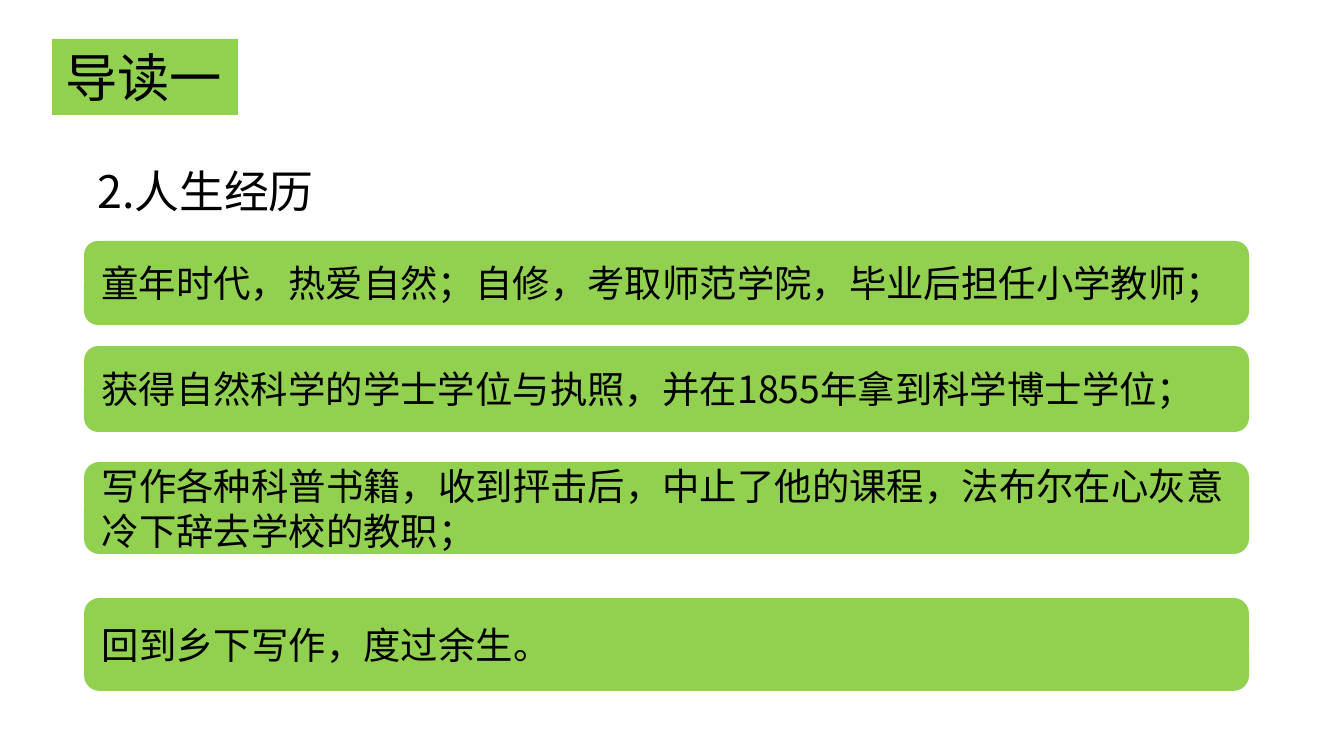
from pptx import Presentation
from pptx.dml.color import RGBColor
from pptx.enum.shapes import MSO_SHAPE
from pptx.enum.text import MSO_ANCHOR, PP_ALIGN
from pptx.oxml.ns import qn
from pptx.util import Pt
from lxml import etree

RECTANGLE = MSO_SHAPE.RECTANGLE
ROUNDED = MSO_SHAPE.ROUNDED_RECTANGLE
TOP, MIDDLE = MSO_ANCHOR.TOP, MSO_ANCHOR.MIDDLE
LEFT = PP_ALIGN.LEFT

FONT = "Noto Sans CJK SC"
GREEN, BLACK = "92D050", "000000"
EMU_PER_PX = 914400 / 134.4

TAG = "导读一"
HEADING = "2.人生经历"
# text, top, height
LIFE_STAGES = [
    ("童年时代，热爱自然；自修，考取师范学院，毕业后担任小学教师；", 241, 84),
    ("获得自然科学的学士学位与执照，并在1855年拿到科学博士学位；", 346, 86),
    ("写作各种科普书籍，收到抨击后，中止了他的课程，法布尔在心灰意冷下辞去学校的教职；", 462, 92),
    ("回到乡下写作，度过余生。", 598, 93),
]
STAGE_LEFT, STAGE_WIDTH = 84, 1165


def px(length):
    return round(length * EMU_PER_PX)


def color(value):
    return RGBColor.from_string(value)


def write(shape, text, size, anchor=MIDDLE, wrap=True):
    frame = shape.text_frame
    frame.word_wrap = wrap
    frame.vertical_anchor = anchor
    paragraph = frame.paragraphs[0]
    paragraph.alignment = LEFT
    run = paragraph.add_run()
    run.text = text
    run.font.size = Pt(size)
    run.font.name = FONT
    run.font.color.rgb = color(BLACK)
    east_asian = etree.SubElement(run.font._element, qn("a:ea"))
    east_asian.set("typeface", FONT)


def add_box(slide, kind, left, top, width, height):
    shape = slide.shapes.add_shape(kind, px(left), px(top), px(width), px(height))
    shape.shadow.inherit = False
    shape.fill.solid()
    shape.fill.fore_color.rgb = color(GREEN)
    shape.line.fill.background()
    return shape


def main():
    presentation = Presentation()
    presentation.slide_width, presentation.slide_height = px(1344), px(756)
    slide = presentation.slides.add_slide(presentation.slide_layouts[6])

    heading = slide.shapes.add_textbox(px(84), px(157), px(1220), px(80))
    write(heading, HEADING, 24, anchor=TOP)

    for text, top, height in LIFE_STAGES:
        stage = add_box(slide, ROUNDED, STAGE_LEFT, top, STAGE_WIDTH, height)
        write(stage, text, 20)

    tag = add_box(slide, RECTANGLE, 52, 39, 186, 76)
    write(tag, TAG, 28, wrap=False)

    presentation.save("out.pptx")


if __name__ == "__main__":
    main()
